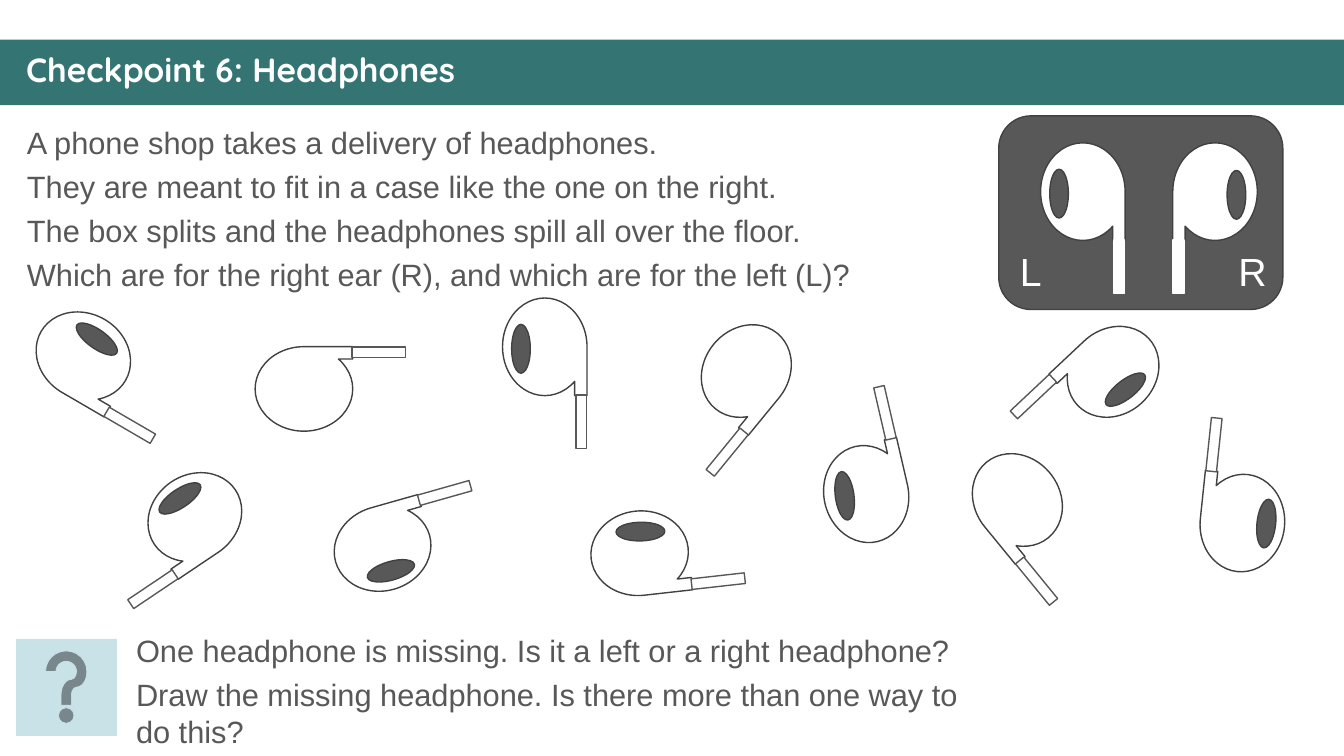
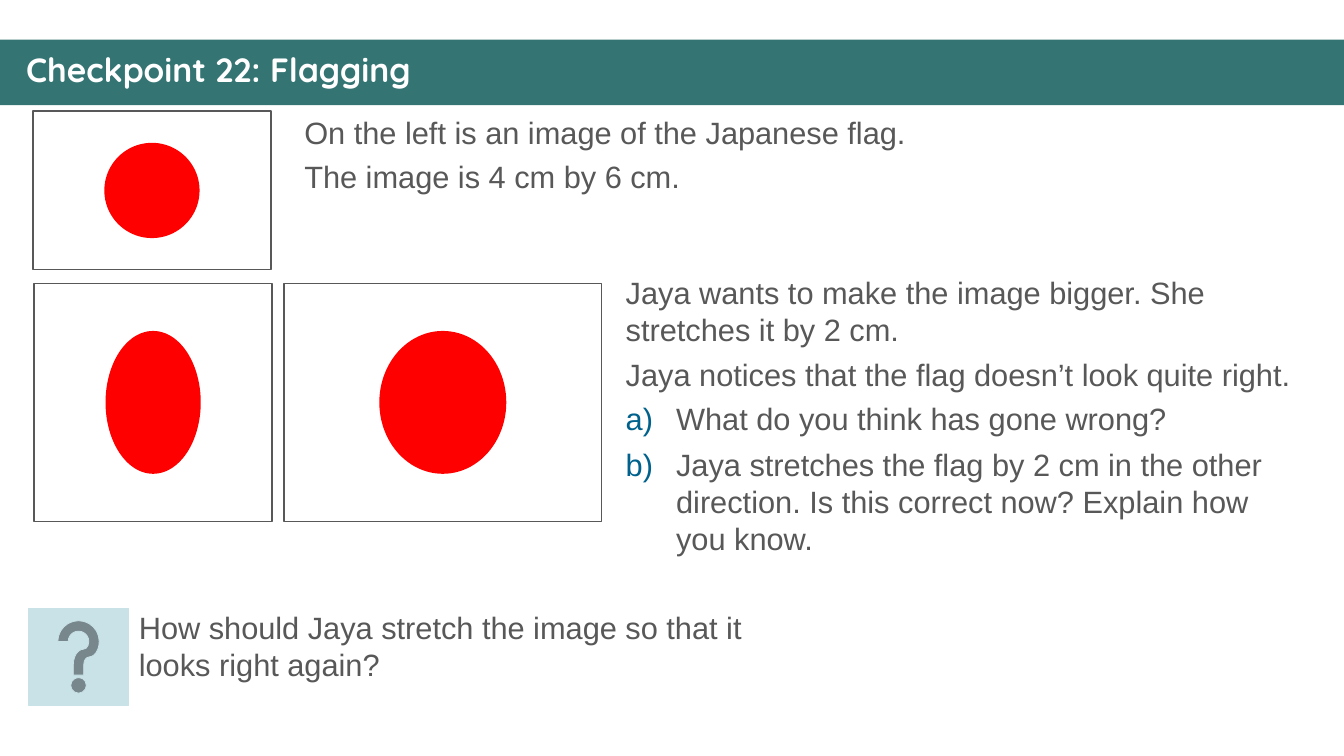
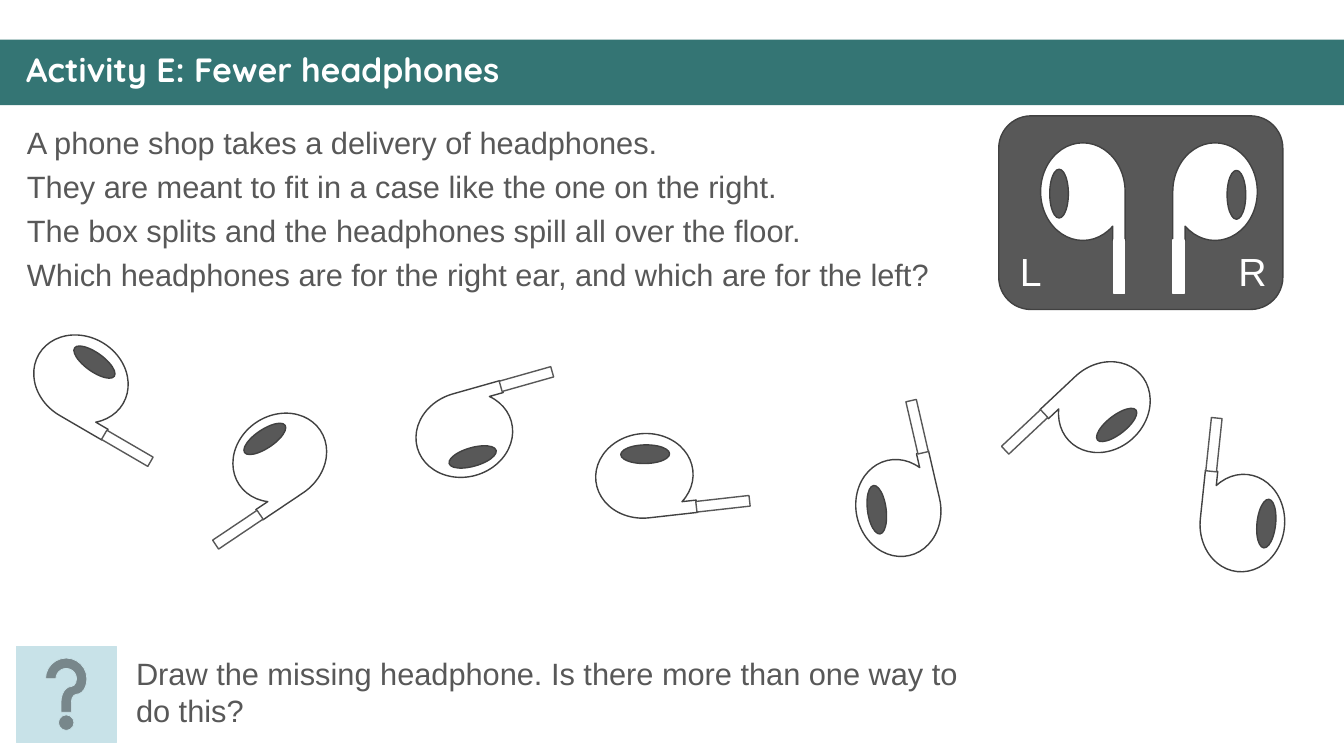
import math
from dataclasses import dataclass

import pptx
import pptx.dml.color
import pptx.enum.shapes
import pptx.oxml
import pptx.oxml.ns
import pptx.presentation
import pptx.shapes.autoshape
import pptx.shapes.shapetree
import pptx.slide
import pptx.text.text
import pptx.util

Cm = pptx.util.Cm
Pt = pptx.util.Pt
RGBColor = pptx.dml.color.RGBColor
Shape = pptx.enum.shapes.MSO_SHAPE

TEAL = RGBColor(0x34, 0x75, 0x74)
WHITE = RGBColor(0xFF, 0xFF, 0xFF)
GREY = RGBColor(0x58, 0x58, 0x58)
OUTLINE = RGBColor(0x41, 0x41, 0x41)
PALE_BLUE = RGBColor(0xC8, 0xE2, 0xE8)
BULLET_BLUE = RGBColor(0x00, 0x62, 0x8C)
RED = RGBColor(0xFF, 0x00, 0x00)

BODY_FONT = "Arial"
TITLE_FONT = "Quicksand"
SLIDE_WIDTH, SLIDE_HEIGHT = 33.87, 19.05

# Headphone parts in centimetres; offsets run from the centre of an unturned bud
BUD_SIZE = (2.46, 2.13)
STEM_SIZE = (0.27, 1.35)
SPEAKER_SIZE = (0.47, 1.23)
STEM_OFFSET = (1.89, 0.92)
RIGHT_SPEAKER_OFFSET = (0.08, -0.54)
LEFT_SPEAKER_OFFSET = (0.05, -0.6)
RIGHT_TILT = 5.4


@dataclass(frozen=True)
class Headphone:
    center_x: float
    center_y: float
    rotation: float
    left_ear: bool = False
    speaker: bool = True
    tilt: float = 0
    stem_line: RGBColor = GREY


@dataclass(frozen=True)
class Flag:
    left: float
    top: float
    width: float
    height: float


@dataclass(frozen=True)
class TextBlock:
    left: float
    top: float
    width: float
    height: float
    lines: tuple[str, ...]
    size: float = 22
    color: RGBColor = GREY
    wrap: bool = True


@dataclass(frozen=True)
class Question:
    """Help button with its prompt."""
    left: float
    top: float
    prompt: TextBlock


def right(x: float, y: float, rotation: float, speaker: bool = True) -> Headphone:
    return Headphone(x, y, rotation, speaker=speaker, tilt=RIGHT_TILT)


def left(x: float, y: float, rotation: float, speaker: bool = True) -> Headphone:
    return Headphone(x, y, rotation, left_ear=True, speaker=speaker)


CASE_HEADPHONES = (
    Headphone(30.62, 4.83, 90, stem_line=WHITE),
    Headphone(27.29, 4.83, 270, left_ear=True, stem_line=WHITE),
)
CASE_LETTERS = (
    TextBlock(25.45, 6.1, 1.07, 1.45, ("L",), 28, WHITE, False),
    TextBlock(30.96, 6.1, 1.24, 1.45, ("R",), 28, WHITE, False),
)
ALL_HEADPHONES = (
    right(25.64, 12.6, 50.7, speaker=False),
    right(28.05, 9.37, 136.8),
    right(2.1, 8.97, 30.2),
    right(21.83, 12.45, 257),
    right(16.12, 13.94, 353.6),
    left(9.64, 13.82, 164.2),
    left(13.73, 8.74, 270),
    left(4.91, 13.03, 326.1),
    left(18.81, 9.35, 309.3, speaker=False),
    left(31.31, 13.18, 96),
    left(7.66, 9.8, 180, speaker=False),
)
FEWER_HEADPHONES = (
    right(27.83, 10.26, 136.8),
    right(2.04, 9.55, 30.2),
    right(22.64, 12.8, 257),
    right(16.24, 11.99, 353.6),
    left(11.7, 10.95, 164.2),
    left(7.05, 11.53, 326.1),
    left(31.31, 13.18, 96),
)
FLAGS = (
    Flag(0.83, 2.8, 6, 4),
    Flag(0.86, 7.14, 6, 6),
    Flag(7.16, 7.14, 8, 6),
)
STORY = (
    "A phone shop takes a delivery of headphones.",
    "They are meant to fit in a case like the one on the right.",
    "The box splits and the headphones spill all over the floor.",
)
DRAW_MISSING = "Draw the missing headphone. Is there more than one way to do this?"


def add_shape(
    shapes: pptx.shapes.shapetree.SlideShapes | pptx.shapes.shapetree.GroupShapes,
    kind: Shape,
    box: tuple[float, float, float, float],
    fill: RGBColor,
    line: RGBColor | None = None,
    line_width: float = 1,
) -> pptx.shapes.autoshape.Shape:
    shape = shapes.add_shape(kind, *(Cm(length) for length in box))
    shape.shadow.inherit = False
    shape.fill.solid()
    shape.fill.fore_color.rgb = fill
    if line is None:
        shape.line.fill.background()
    else:
        shape.line.color.rgb = line
        shape.line.width = Pt(line_width)
    return shape


def format_runs(
    paragraph: pptx.text.text._Paragraph,
    font_name: str,
    size: float,
    color: RGBColor,
    bold: bool = False,
) -> None:
    for run in paragraph.runs:
        run.font.name = font_name
        run.font.size = Pt(size)
        run.font.color.rgb = color
        run.font.bold = bold


def add_text(
    shapes: pptx.shapes.shapetree.SlideShapes | pptx.shapes.shapetree.GroupShapes,
    block: TextBlock,
) -> pptx.text.text.TextFrame:
    text_box = shapes.add_textbox(
        Cm(block.left), Cm(block.top), Cm(block.width), Cm(block.height)
    )
    text_frame = text_box.text_frame
    text_frame.word_wrap = block.wrap
    text_frame.text = "\n".join(block.lines)
    for index, paragraph in enumerate(text_frame.paragraphs):
        if index:
            paragraph.space_before = Pt(5)
        format_runs(paragraph, BODY_FONT, block.size, block.color)
    return text_frame


def letter_item(paragraph: pptx.text.text._Paragraph, start: int) -> None:
    """Number a paragraph a), b), ... with a hanging indent."""
    properties = paragraph._p.get_or_add_pPr()
    properties.set("marL", str(Cm(1.27)))
    properties.set("indent", str(-Cm(1.27)))
    namespace = pptx.oxml.ns.nsdecls("a")
    for xml in (
        f'<a:buClr {namespace}><a:srgbClr val="{BULLET_BLUE}"/></a:buClr>',
        f'<a:buAutoNum {namespace} type="alphaLcParenR" startAt="{start}"/>',
    ):
        properties.append(pptx.oxml.parse_xml(xml))


def add_headphone(
    shapes: pptx.shapes.shapetree.SlideShapes | pptx.shapes.shapetree.GroupShapes,
    headphone: Headphone,
) -> None:
    parts = shapes.add_group_shape().shapes
    angle = math.radians(headphone.rotation)

    def add_part(
        kind: Shape,
        offset: tuple[float, float],
        size: tuple[float, float],
        turn: float,
        fill: RGBColor,
        line: RGBColor,
    ) -> pptx.shapes.autoshape.Shape:
        x, y = offset
        if headphone.left_ear:
            x = -x
        center_x = headphone.center_x + x * math.cos(angle) - y * math.sin(angle)
        center_y = headphone.center_y + x * math.sin(angle) + y * math.cos(angle)
        width, height = size
        box = (center_x - width / 2, center_y - height / 2, width, height)
        part = add_shape(parts, kind, box, fill, line)
        part.rotation = turn % 360
        return part

    bud = add_part(
        Shape.FLOWCHART_SEQUENTIAL_ACCESS_STORAGE, (0, 0), BUD_SIZE,
        headphone.rotation, WHITE, OUTLINE,
    )
    if headphone.left_ear:
        bud.element.spPr.get_or_add_xfrm().set("flipH", "1")
    upright = headphone.rotation + (90 if headphone.left_ear else -90)
    add_part(Shape.RECTANGLE, STEM_OFFSET, STEM_SIZE, upright, WHITE, headphone.stem_line)
    if headphone.speaker:
        offset = LEFT_SPEAKER_OFFSET if headphone.left_ear else RIGHT_SPEAKER_OFFSET
        add_part(
            Shape.OVAL, offset, SPEAKER_SIZE, upright + headphone.tilt, GREY, OUTLINE
        )


def add_case(slide: pptx.slide.Slide) -> None:
    shapes = slide.shapes.add_group_shape().shapes
    add_shape(shapes, Shape.ROUNDED_RECTANGLE, (25.17, 2.92, 7.16, 4.88), GREY, OUTLINE)
    for headphone in CASE_HEADPHONES:
        add_headphone(shapes, headphone)
    for letter in CASE_LETTERS:
        add_text(shapes, letter)


def add_flag(slide: pptx.slide.Slide, flag: Flag) -> None:
    shapes = slide.shapes.add_group_shape().shapes
    field = (flag.left, flag.top, flag.width, flag.height)
    add_shape(shapes, Shape.RECTANGLE, field, WHITE, GREY)
    disc = (
        flag.left + 0.3 * flag.width,
        flag.top + 0.2 * flag.height,
        0.4 * flag.width,
        0.6 * flag.height,
    )
    add_shape(shapes, Shape.OVAL, disc, RED)


def add_question(slide: pptx.slide.Slide, question: Question) -> None:
    box = (question.left, question.top, 2.52, 2.43)
    add_shape(
        slide.shapes, Shape.ACTION_BUTTON_HELP, box, PALE_BLUE, PALE_BLUE, line_width=0.5
    )
    add_text(slide.shapes, question.prompt)


def add_titled_slide(
    presentation: pptx.presentation.Presentation, title: str
) -> pptx.slide.Slide:
    slide = presentation.slides.add_slide(presentation.slide_layouts[6])
    add_shape(slide.shapes, Shape.RECTANGLE, (0, 1, SLIDE_WIDTH, 1.65), TEAL)
    text_frame = add_text(slide.shapes, TextBlock(0.41, 1.22, 33.12, 1.19, (title,)))
    paragraph = text_frame.paragraphs[0]
    paragraph.line_spacing = 0.9
    format_runs(paragraph, TITLE_FONT, 24, WHITE, bold=True)
    return slide


def add_headphone_slide(
    presentation: pptx.presentation.Presentation,
    title: str,
    story_question: str,
    headphones: tuple[Headphone, ...],
    question: Question,
) -> None:
    slide = add_titled_slide(presentation, title)
    add_text(
        slide.shapes, TextBlock(0.43, 3, 24.41, 5.72, STORY + (story_question,))
    )
    for headphone in headphones:
        add_headphone(slide.shapes, headphone)
    add_case(slide)
    add_question(slide, question)


def add_flag_slide(presentation: pptx.presentation.Presentation) -> None:
    slide = add_titled_slide(presentation, "Checkpoint 22: Flagging")
    for flag in FLAGS:
        add_flag(slide, flag)

    # Story
    add_text(slide.shapes, TextBlock(7.42, 2.74, 26.44, 2.34, (
        "On the left is an image of the Japanese flag.",
        "The image is 4 cm by 6 cm.",
    )))
    add_text(slide.shapes, TextBlock(15.52, 6.78, 18.34, 2.13, (
        "Jaya wants to make the image bigger. She stretches it by 2 cm.",
    )))

    # Lettered questions
    first = add_text(slide.shapes, TextBlock(15.52, 8.84, 18.34, 3.45, (
        "Jaya notices that the flag doesn’t look quite right.",
        "What do you think has gone wrong?",
    )))
    letter_item(first.paragraphs[1], 1)
    second = add_text(slide.shapes, TextBlock(15.52, 11.1, 17.6, 3.07, (
        "Jaya stretches the flag by 2 cm in the other direction. "
        "Is this correct now? Explain how you know.",
    )))
    letter_item(second.paragraphs[0], 2)

    add_question(slide, Question(0.72, 15.34, TextBlock(3.25, 15.21, 16.74, 2.13, (
        "How should Jaya stretch the image so that it looks right again?",
    ))))


def main() -> None:
    presentation = pptx.Presentation()
    presentation.slide_width = Cm(SLIDE_WIDTH)
    presentation.slide_height = Cm(SLIDE_HEIGHT)

    add_headphone_slide(
        presentation,
        "Checkpoint 6: Headphones",
        "Which are for the right ear (R), and which are for the left (L)?",
        ALL_HEADPHONES,
        Question(0.41, 16.1, TextBlock(3.18, 15.8, 22.17, 3.25, (
            "One headphone is missing. Is it a left or a right headphone?",
            DRAW_MISSING,
        ))),
    )
    add_flag_slide(presentation)
    add_headphone_slide(
        presentation,
        "Activity E: Fewer headphones",
        "Which headphones are for the right ear, and which are for the left?",
        FEWER_HEADPHONES,
        Question(0.41, 16.28, TextBlock(3.18, 16.38, 22.17, 2.13, (DRAW_MISSING,))),
    )
    presentation.save("out.pptx")


if __name__ == "__main__":
    main()
